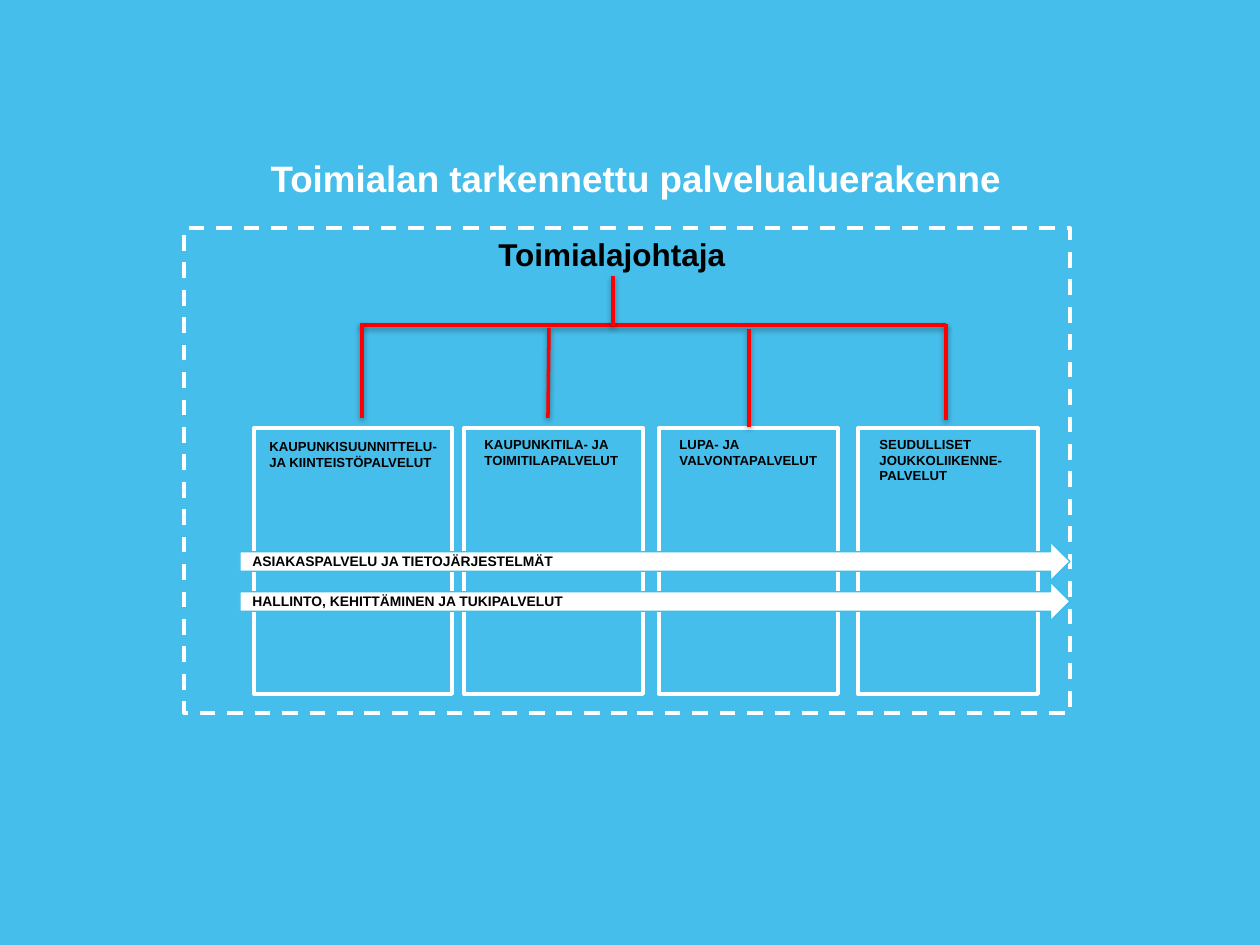
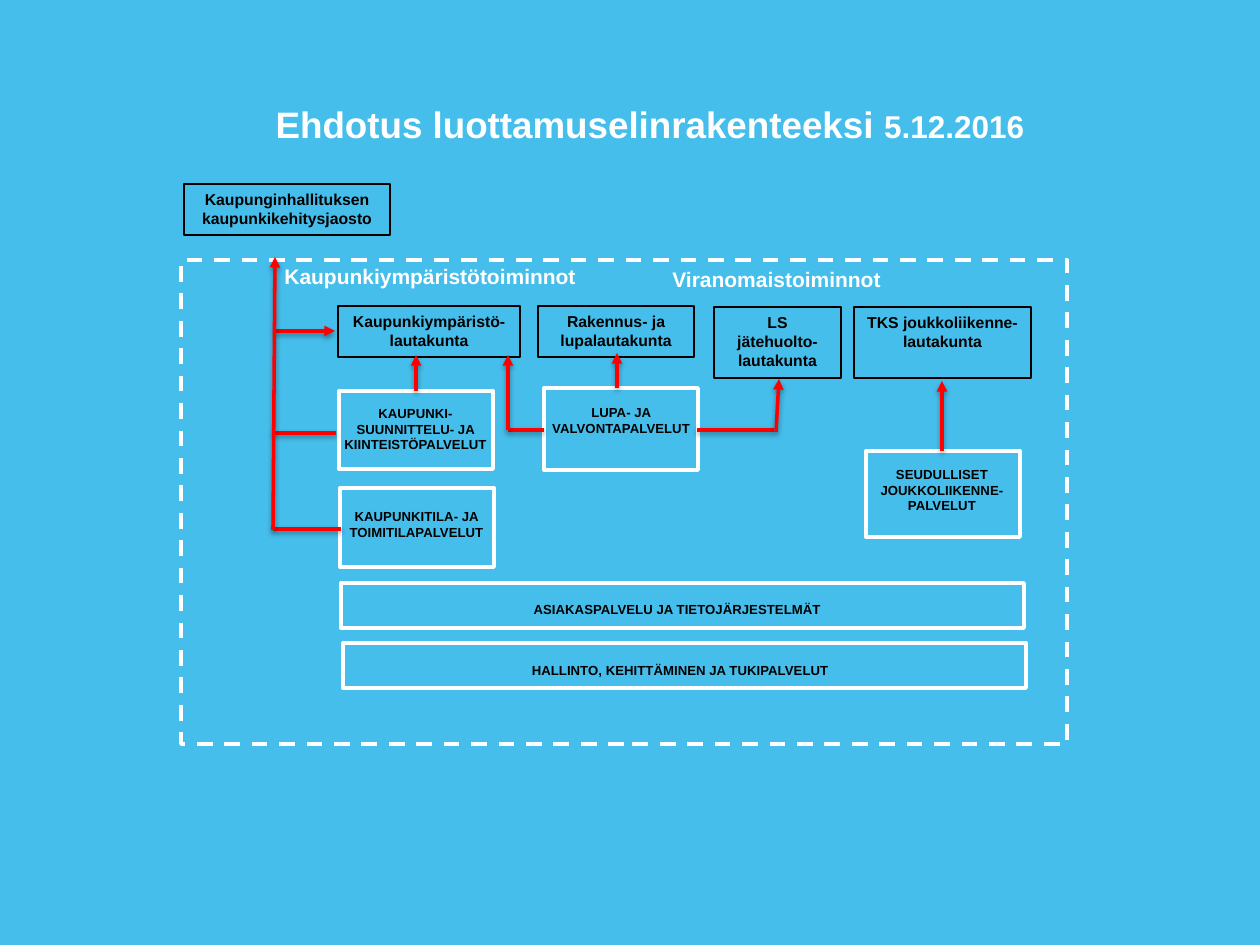
"""Builds two slides on the service areas and the elected bodies of a city division."""
from lxml import etree
from pptx import Presentation
from pptx.dml.color import RGBColor
from pptx.enum.dml import MSO_LINE
from pptx.enum.shapes import MSO_CONNECTOR, MSO_SHAPE
from pptx.enum.text import MSO_ANCHOR, MSO_AUTO_SIZE, PP_ALIGN
from pptx.oxml import parse_xml
from pptx.oxml.ns import nsdecls, qn
from pptx.util import Pt

RECT, ARROW = MSO_SHAPE.RECTANGLE, MSO_SHAPE.RIGHT_ARROW
STRAIGHT, DASH = MSO_CONNECTOR.STRAIGHT, MSO_LINE.DASH
LEFT, CENTER = PP_ALIGN.LEFT, PP_ALIGN.CENTER
TOP, MIDDLE = MSO_ANCHOR.TOP, MSO_ANCHOR.MIDDLE
NO_FIT = MSO_AUTO_SIZE.NONE

COLORS = {"sky": "46BEEB", "edge": "40BCEA", "white": "FFFFFF", "black": "000000", "red": "FF0000"}
FONT = "Arial"
EMU_PER_PX = 914400 / 126
SLIDE_SIZE = (1260, 945)
SHADOW = (
    f'<a:effectLst {nsdecls("a")}><a:outerShdw blurRad="39370" dist="20320" dir="5400000" rotWithShape="0">'
    '<a:srgbClr val="000000"><a:alpha val="38000"/></a:srgbClr></a:outerShdw></a:effectLst>'
)

STRUCTURE = {
    "title": [("Toimialan tarkennettu palvelualuerakenne", 21)],
    "title_at": (258, 149, 762, 57),
    "frame": (184, 228, 886, 485),
    "headings": [("Toimialajohtaja", (486, 229, 289, 51), 18, "black")],
    "boards": [],
    "label_align": LEFT,
    "services": [
        ("KAUPUNKISUUNNITTELU- JA KIINTEISTÖPALVELUT", (254, 428, 198, 266), (257, 432, 199, 44)),
        ("KAUPUNKITILA- JA TOIMITILAPALVELUT", (464, 428, 179, 266), (472, 430, 168, 44)),
        ("LUPA- JA VALVONTAPALVELUT", (659, 428, 179, 266), (667, 430, 172, 44)),
        ("SEUDULLISET JOUKKOLIIKENNE-PALVELUT", (858, 428, 180, 266), (867, 430, 159, 60)),
    ],
    "arrows": [
        ("ASIAKASPALVELU JA TIETOJÄRJESTELMÄT", (240, 542, 830, 39)),
        ("HALLINTO, KEHITTÄMINEN JA TUKIPALVELUT", (240, 582, 830, 39)),
    ],
    "lines": [
        (360, 325, 946, 325), (362, 418, 362, 323), (946, 420, 946, 324),
        (613, 326, 613, 276), (749, 427, 749, 329), (548, 418, 549, 328),
    ],
    "pointers": [],
}

BODIES = {
    "title": [("Ehdotus luottamuselinrakenteeksi ", 21), ("5.12.2016", 18)],
    "title_at": (263, 95, 791, 57),
    "frame": (181, 260, 886, 484),
    "headings": [
        ("Kaupunkiympäristötoiminnot", (272, 257, 320, 38), 12, "white"),
        ("Viranomaistoiminnot", (660, 260, 236, 38), 12, "white"),
    ],
    "boards": [
        ("Kaupunginhallituksen\nkaupunkikehitysjaosto", (184, 184, 206, 51)),
        ("Kaupunkiympäristö-lautakunta", (338, 306, 182, 51)),
        ("Rakennus- ja lupalautakunta", (538, 306, 156, 51)),
        ("LS jätehuolto-\nlautakunta", (714, 307, 127, 71)),
        ("TKS joukkoliikenne-\nlautakunta", (854, 307, 177, 71)),
    ],
    "label_align": CENTER,
    "services": [
        ("KAUPUNKI-SUUNNITTELU- JA KIINTEISTÖPALVELUT", (339, 391, 154, 78), (326, 399, 179, 60)),
        ("KAUPUNKITILA- JA TOIMITILAPALVELUT", (340, 488, 154, 79), (334, 502, 165, 44)),
        ("LUPA- JA VALVONTAPALVELUT", (544, 388, 154, 82), (536, 398, 170, 44)),
        ("SEUDULLISET JOUKKOLIIKENNE-PALVELUT", (866, 451, 154, 86), (866, 460, 152, 60)),
        ("ASIAKASPALVELU JA TIETOJÄRJESTELMÄT", (341, 583, 683, 45), (340, 595, 674, 29)),
        ("HALLINTO, KEHITTÄMINEN JA TUKIPALVELUT", (343, 643, 683, 45), (343, 656, 674, 29)),
    ],
    "arrows": [],
    "lines": [
        (697, 430, 774, 430), (273, 433, 336, 433), (273, 529, 341, 529), (508, 430, 544, 430),
    ],
    "pointers": [
        (275, 331, 335, 331), (273, 530, 275, 257), (508, 430, 508, 355), (776, 432, 779, 379),
        (416, 391, 416, 355), (617, 388, 617, 353), (942, 451, 942, 381),
    ],
}


def px(*values):
    return [round(v * EMU_PER_PX) for v in values]


def rgb(name):
    return RGBColor.from_string(COLORS[name])


def style_font(font, size, color):
    font.name, font.size, font.bold = FONT, Pt(size), True
    font.color.rgb = rgb(color)


def set_frame(tf, anchor):
    tf.word_wrap, tf.auto_size, tf.vertical_anchor = True, NO_FIT, anchor


def set_text(s, text, size, color="black", align=LEFT, anchor=TOP):
    tf = s.text_frame
    set_frame(tf, anchor)
    tf.text = text
    for p in tf.paragraphs:
        p.alignment = align
        for r in p.runs:
            style_font(r.font, size, color)


def add_box(sp, at, line, width, fill=None, kind=RECT):
    s = sp.add_shape(kind, *px(*at))
    s.shadow.inherit = False
    if fill:
        s.fill.solid()
        s.fill.fore_color.rgb = rgb(fill)
    else:
        s.fill.background()
    s.line.color.rgb = rgb(line)
    s.line.width = Pt(width)
    return s


def add_line(sp, ends, pointed=False):
    s = sp.add_connector(STRAIGHT, *px(*ends))
    s.line.color.rgb = rgb("red")
    s.line.width = Pt(2)
    if pointed:
        etree.SubElement(s.line._get_or_add_ln(), qn("a:tailEnd"), type="triangle")
    s._element.spPr.append(parse_xml(SHADOW))


def set_title(s, parts, at):
    s.left, s.top, s.width, s.height = px(*at)
    set_frame(s.text_frame, MIDDLE)
    p = s.text_frame.paragraphs[0]
    p.alignment = LEFT
    for text, size in parts:
        r = p.add_run()
        r.text = text
        style_font(r.font, size, "white")


def build_slide(prs, content):
    slide = prs.slides.add_slide(prs.slide_layouts.get_by_name("Title Only"))
    sp = slide.shapes
    set_title(sp.title, content["title"], content["title_at"])
    add_box(sp, content["frame"], "white", 2.25).line.dash_style = DASH
    for text, at, size, color in content["headings"]:
        set_text(sp.add_textbox(*px(*at)), text, size, color)
    for text, at in content["boards"]:
        set_text(add_box(sp, at, "black", 0.75), text, 9, align=CENTER)
    for text, box_at, label_at in content["services"]:
        add_box(sp, box_at, "white", 2.25)
        set_text(sp.add_textbox(*px(*label_at)), text, 7.5, align=content["label_align"])
    for text, at in content["arrows"]:
        set_text(add_box(sp, at, "edge", 0.75, "white", ARROW), text, 7.9, anchor=MIDDLE)
    for ends in content["lines"]:
        add_line(sp, ends)
    for ends in content["pointers"]:
        add_line(sp, ends, pointed=True)


def main():
    prs = Presentation()
    prs.slide_width, prs.slide_height = px(*SLIDE_SIZE)
    fill = prs.slide_master.background.fill
    fill.solid()
    fill.fore_color.rgb = rgb("sky")
    for content in (STRUCTURE, BODIES):
        build_slide(prs, content)
    prs.save("out.pptx")


if __name__ == "__main__":
    main()
